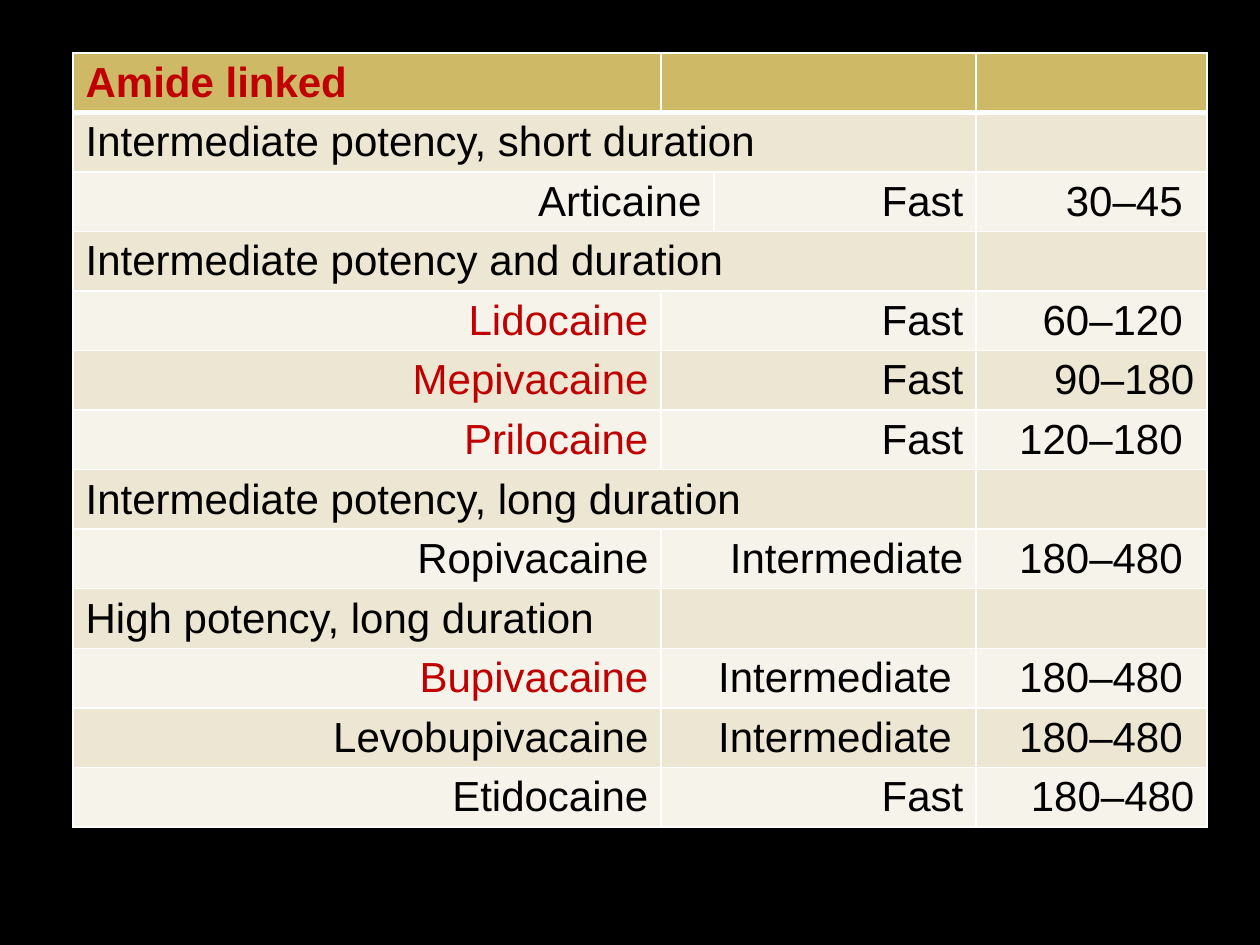
from lxml.etree import SubElement
from pptx import Presentation
from pptx.dml.color import RGBColor
from pptx.enum.text import MSO_ANCHOR, PP_ALIGN
from pptx.oxml import parse_xml
from pptx.oxml.ns import nsdecls, qn
from pptx.util import Emu, Pt

BLACK = RGBColor(0x00, 0x00, 0x00)
RED = RGBColor(0xC0, 0x00, 0x00)
GOLD = RGBColor(0xCE, 0xB9, 0x66)
BANDS = RGBColor(0xED, 0xE6, 0xD3), RGBColor(0xF6, 0xF3, 0xEA)

# Each row: {first grid column of a cell: text}; a cell spans up to the next one
ROWS = [
    {0: "Amide linked", 1: "", 3: ""},
    {0: "Intermediate potency, short duration", 3: ""},
    {0: "Articaine", 2: "Fast", 3: "30–45 "},
    {0: "Intermediate potency and duration", 3: ""},
    {0: "Lidocaine", 1: "Fast", 3: "60–120 "},
    {0: "Mepivacaine", 1: "Fast", 3: "90–180"},
    {0: "Prilocaine", 1: "Fast", 3: "120–180 "},
    {0: "Intermediate potency, long duration", 3: ""},
    {0: "Ropivacaine", 1: "Intermediate", 3: "180–480 "},
    {0: "High potency, long duration", 1: "", 3: ""},
    {0: "Bupivacaine", 1: "Intermediate ", 3: "180–480 "},
    {0: "Levobupivacaine", 1: "Intermediate ", 3: "180–480 "},
    {0: "Etidocaine", 1: "Fast", 3: "180–480"},
]
RED_TEXTS = {"Amide linked", "Lidocaine", "Mepivacaine", "Prilocaine", "Bupivacaine"}
COL_WIDTHS = [588, 53, 262, 231]
LEFT, TOP, HEIGHT = 73, 53, 774


def px(n):
    return Emu(n * 914400 // 126)


def set_borders(cell, top, bottom):
    """Draw white borders; top and bottom widths are in points."""
    tc_pr = cell._tc.get_or_add_tcPr()
    widths = {"lnL": 1, "lnR": 1, "lnT": top, "lnB": bottom}
    for i, (tag, width) in enumerate(widths.items()):
        ln = parse_xml(f'<a:{tag} {nsdecls("a")} w="{Pt(width)}"/>')
        fill = SubElement(ln, qn("a:solidFill"))
        SubElement(fill, qn("a:srgbClr"), val="FFFFFF")
        tc_pr.insert(i, ln)


def write_text(cell, text, align, bold):
    cell.text_frame.text = text
    p = cell.text_frame.paragraphs[0]
    p.alignment = align
    for r in p.runs:
        r.font.name, r.font.size, r.font.bold = "Arial", Pt(24), bold
        r.font.color.rgb = RED if text in RED_TEXTS else BLACK


# Black slide
prs = Presentation()
prs.slide_width, prs.slide_height = px(1260), px(945)
s = prs.slides.add_slide(prs.slide_layouts[6])
s.background.fill.solid()
s.background.fill.fore_color.rgb = BLACK

# Table grid
table = s.shapes.add_table(len(ROWS), len(COL_WIDTHS), px(LEFT), px(TOP),
                           px(sum(COL_WIDTHS)), px(HEIGHT)).table
for column, width in zip(table.columns, COL_WIDTHS):
    column.width = px(width)
for row in table.rows:
    row.height = px(HEIGHT) // len(ROWS)

# Cells: headings have no duration and stand left, drugs stand right
for i, row in enumerate(ROWS):
    align = PP_ALIGN.RIGHT if row[3] else PP_ALIGN.LEFT
    starts = list(row)
    for start, end in zip(starts, starts[1:] + [len(COL_WIDTHS)]):
        cell = table.cell(i, start)
        if end - start > 1:
            cell.merge(table.cell(i, end - 1))
        cell.margin_top = cell.margin_bottom = px(5)
        cell.vertical_anchor = MSO_ANCHOR.MIDDLE
        cell.fill.solid()
        cell.fill.fore_color.rgb = GOLD if i == 0 else BANDS[(i - 1) % 2]
        set_borders(cell, top=3 if i == 1 else 1, bottom=3 if i == 0 else 1)
        write_text(cell, row[start], align, bold=i == 0)

prs.save("out.pptx")
